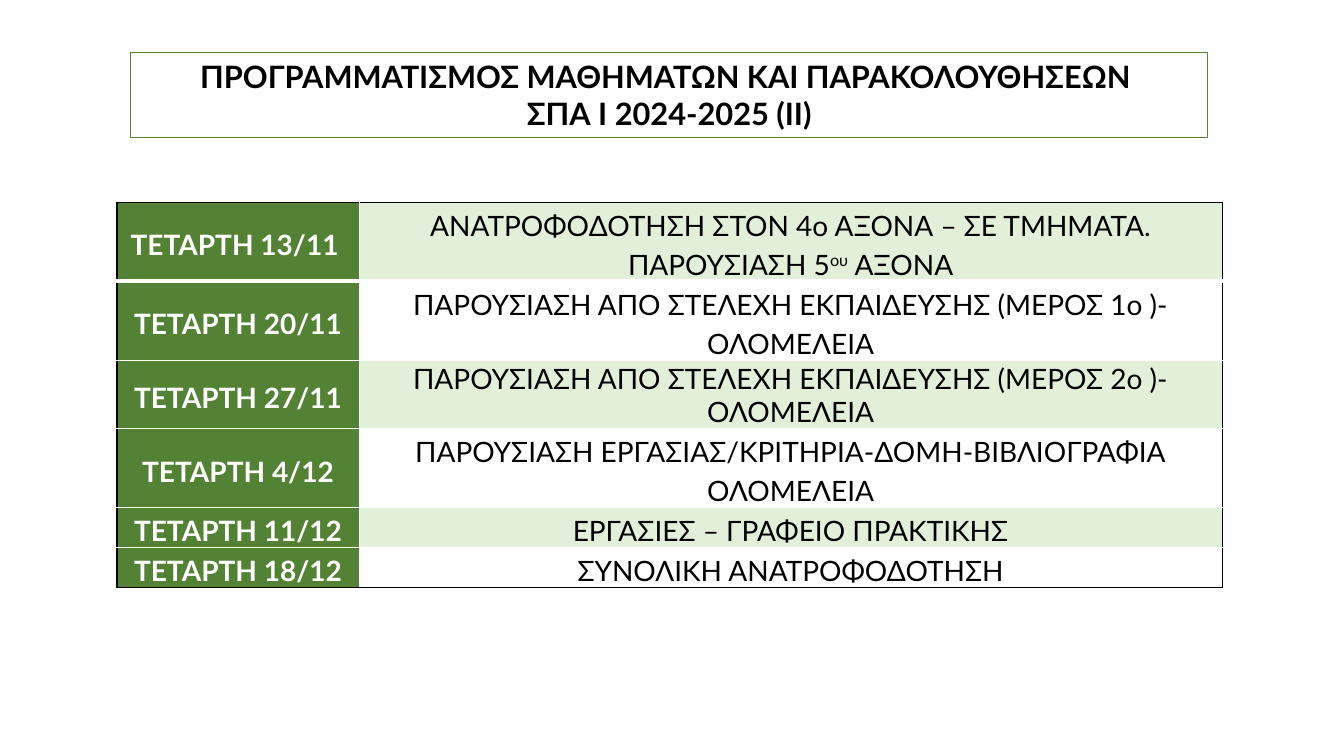
from dataclasses import dataclass

from lxml import etree
from pptx import Presentation
from pptx.dml.color import RGBColor
from pptx.enum.text import MSO_ANCHOR, PP_ALIGN
from pptx.oxml.ns import qn
from pptx.util import Cm, Pt

CENTER = PP_ALIGN.CENTER
MIDDLE = MSO_ANCHOR.MIDDLE


@dataclass(frozen=True)
class Theme:
    font: str = "Lato"
    title_size: int = 22
    table_size: int = 20
    green: str = "548235"
    pale_green: str = "E2F0D9"
    white: str = "FFFFFF"
    black: str = "000000"


theme = Theme()


def write(frame, text, size, color=theme.black, bold=False, spacing=1.0, after=0):
    """Fill a text frame: a newline starts a paragraph, text between ^ marks is raised."""
    for number, line in enumerate(text.split("\n")):
        paragraph = frame.add_paragraph() if number else frame.paragraphs[0]
        paragraph.alignment = CENTER
        paragraph.line_spacing = spacing
        paragraph.space_before = Pt(0)
        paragraph.space_after = Pt(after)
        for part, words in enumerate(line.split("^")):
            run = paragraph.add_run()
            run.text = words
            run.font.name = theme.font
            run.font.size = Pt(size)
            run.font.bold = bold
            run.font.color.rgb = RGBColor.from_string(color)
            if part % 2:
                run.font._element.set("baseline", "30000")


def set_borders(cell, **sides):
    """Draw each side, given as L, R, T, B = (colour, points)."""
    properties = cell._tc.get_or_add_tcPr()
    for place, side in enumerate("LRTB"):
        color, width = sides[side]
        line = etree.Element(qn(f"a:ln{side}"), w=str(Pt(width)))
        fill = etree.SubElement(line, qn("a:solidFill"))
        etree.SubElement(fill, qn("a:srgbClr"), val=color)
        properties.insert(place, line)


presentation = Presentation()
presentation.slide_width = Cm(33.87)
presentation.slide_height = Cm(19.05)
slide = presentation.slides.add_slide(presentation.slide_layouts[5])

# Title
title = slide.shapes.title
title.left, title.top, title.width, title.height = Cm(3.29), Cm(1.32), Cm(27.15), Cm(2.14)
title.line.color.rgb = RGBColor.from_string(theme.green)
title.line.width = Pt(0.75)
title.text_frame.vertical_anchor = MIDDLE
write(
    title.text_frame,
    "ΠΡΟΓΡΑΜΜΑΤΙΣΜΟΣ ΜΑΘΗΜΑΤΩΝ ΚΑΙ ΠΑΡΑΚΟΛΟΥΘΗΣΕΩΝ \nΣΠΑ Ι 2024-2025 (ΙΙ)",
    theme.title_size,
    bold=True,
)

# Schedule: date, subject, row height in cm, line spacing and space after of the subject
schedule = [
    ("ΤΕΤΑΡΤΗ 13/11 ", "ΑΝΑΤΡΟΦΟΔΟΤΗΣΗ ΣΤΟΝ 4ο ΑΞΟΝΑ – ΣΕ ΤΜΗΜΑΤΑ. ΠΑΡΟΥΣΙΑΣΗ 5^ου^ ΑΞΟΝΑ", 1.95, 1.15, 10),
    ("ΤΕΤΑΡΤΗ 20/11", "ΠΑΡΟΥΣΙΑΣΗ ΑΠΟ ΣΤΕΛΕΧΗ ΕΚΠΑΙΔΕΥΣΗΣ (ΜΕΡΟΣ 1ο )-ΟΛΟΜΕΛΕΙΑ", 1.95, 1.15, 10),
    ("ΤΕΤΑΡΤΗ 27/11", "ΠΑΡΟΥΣΙΑΣΗ ΑΠΟ ΣΤΕΛΕΧΗ ΕΚΠΑΙΔΕΥΣΗΣ (ΜΕΡΟΣ 2ο )-ΟΛΟΜΕΛΕΙΑ", 1.7, 1.0, 0),
    ("ΤΕΤΑΡΤΗ 4/12", "ΠΑΡΟΥΣΙΑΣΗ ΕΡΓΑΣΙΑΣ/ΚΡΙΤΗΡΙΑ-ΔΟΜΗ-ΒΙΒΛΙΟΓΡΑΦΙΑ ΟΛΟΜΕΛΕΙΑ", 1.95, 1.15, 10),
    ("ΤΕΤΑΡΤΗ 11/12", "ΕΡΓΑΣΙΕΣ – ΓΡΑΦΕΙΟ ΠΡΑΚΤΙΚΗΣ", 1, 1.15, 10),
    ("ΤΕΤΑΡΤΗ 18/12", "ΣΥΝΟΛΙΚΗ ΑΝΑΤΡΟΦΟΔΟΤΗΣΗ", 1, 1.15, 10),
]
last = len(schedule) - 1
table = slide.shapes.add_table(
    len(schedule), 2, Cm(2.95), Cm(5.1), Cm(27.85), Cm(9.55)
).table
table.first_row = False
table.horz_banding = False
table.columns[0].width = Cm(6.1)
table.columns[1].width = Cm(21.75)

outer = (theme.black, 1)
inner = (theme.white, 1)
first_rule = (theme.white, 3)

for row, (date, subject, height, spacing, after) in enumerate(schedule):
    table.rows[row].height = Cm(height)
    date_cell, subject_cell = table.cell(row, 0), table.cell(row, 1)
    band = theme.white if row % 2 else theme.pale_green
    top = outer if row == 0 else first_rule if row == 1 else inner
    bottom = outer if row == last else first_rule if row == 0 else inner
    for cell, fill in ((date_cell, theme.green), (subject_cell, band)):
        cell.fill.solid()
        cell.fill.fore_color.rgb = RGBColor.from_string(fill)
        cell.vertical_anchor = MIDDLE
        cell.margin_left = cell.margin_right = Cm(0.13)
        cell.margin_top, cell.margin_bottom = Cm(0.03), Cm(0)
    set_borders(date_cell, L=outer, R=inner, T=top, B=bottom)
    set_borders(subject_cell, L=inner, R=outer, T=top, B=bottom)
    write(date_cell.text_frame, date, theme.table_size,
          color=theme.white, bold=True, spacing=1.15, after=10)
    write(subject_cell.text_frame, subject, theme.table_size,
          spacing=spacing, after=after)

presentation.save("out.pptx")
